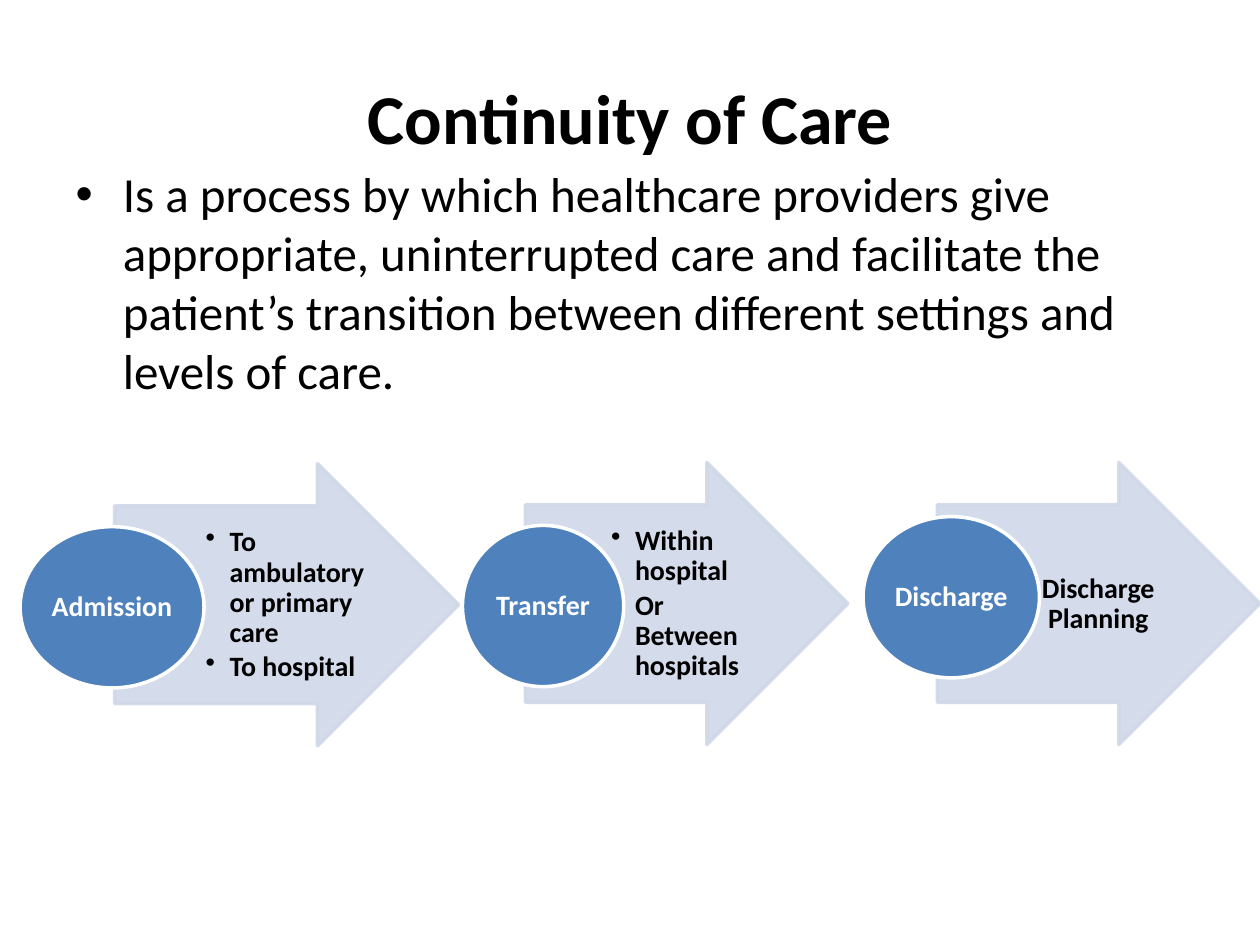
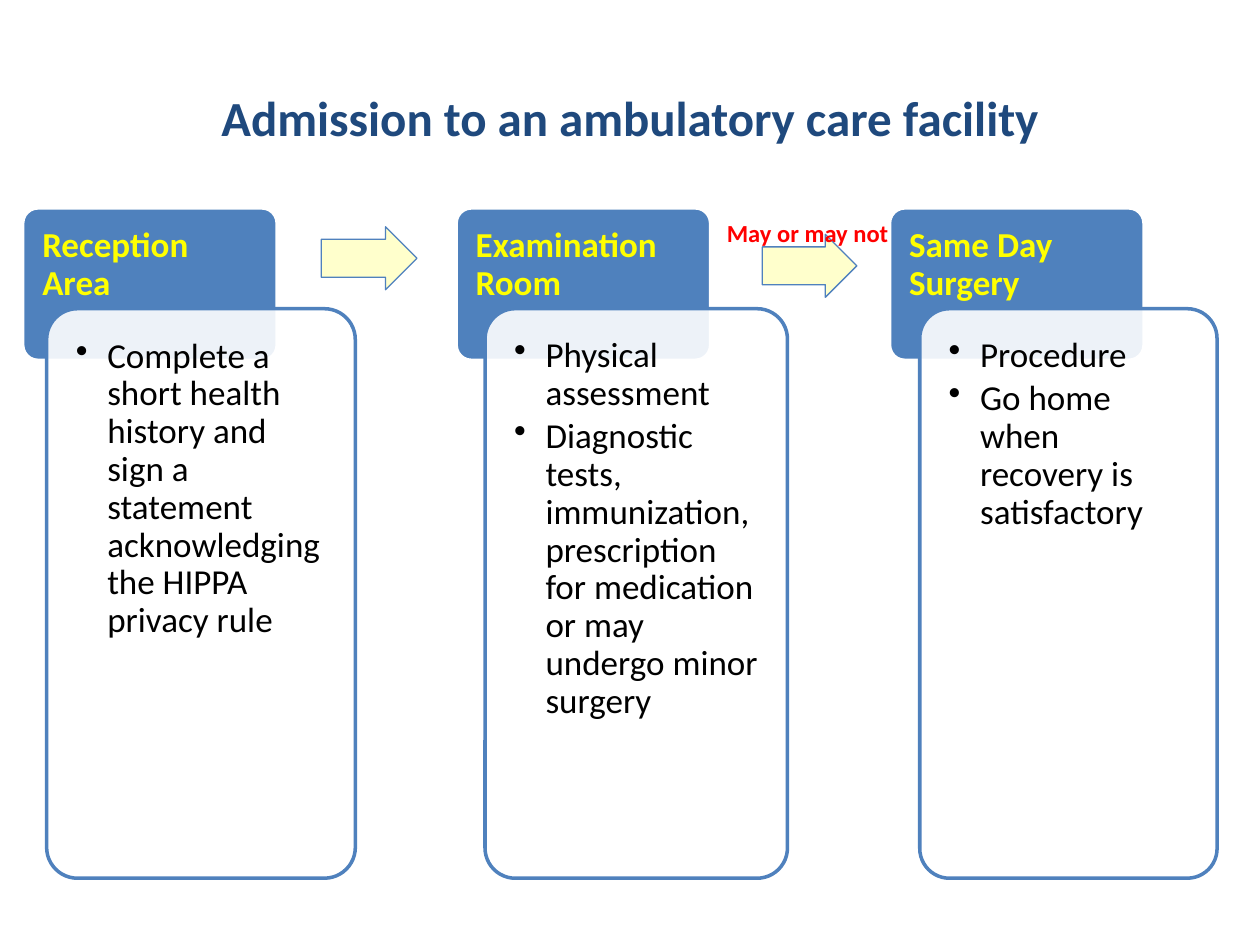
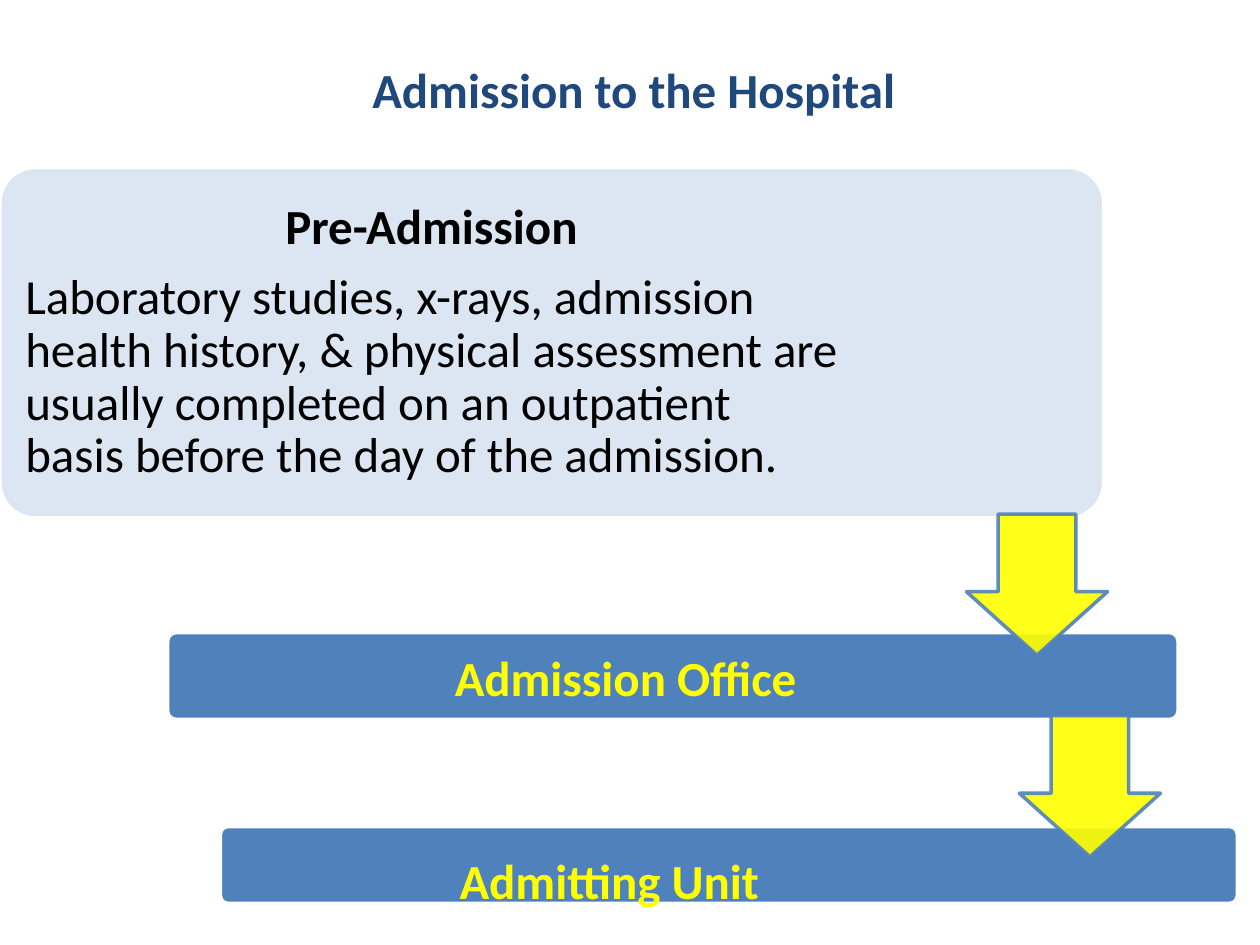
from lxml import etree
from pptx import Presentation
from pptx import util as u
from pptx.dml.color import RGBColor
from pptx.enum import shapes, text
from pptx.oxml.ns import qn

FONT = "Calibri"
COLORS = {
    "black": "000000", "white": "FFFFFF", "navy": "1F497D", "blue": "4F81BD",
    "mist": "D0D8E8", "pale": "DCE6F2", "yellow": "FFFF00", "cream": "FFFFCC",
    "red": "FF0000",
}
KINDS = shapes.MSO_SHAPE
CENTER, LEFT = text.PP_ALIGN.CENTER, text.PP_ALIGN.LEFT
MIDDLE, TOP = text.MSO_ANCHOR.MIDDLE, text.MSO_ANCHOR.TOP

TITLE_AT = (0.5, 0.3, 9, 1.25)
CONTINUITY = (
    "Is a process by which healthcare providers give appropriate, uninterrupted "
    "care and facilitate the patient’s transition between different settings and "
    "levels of care."
)
# Stage name, ellipse position, arrow position, arrow text, bulleted
STAGES = [
    ("Admission", (0.16, 4.18, 1.46, 1.28), (0.91, 3.68, 2.73, 2.24),
     ["To ambulatory or primary care", "To hospital"], True),
    ("Transfer", (3.67, 4.17, 1.28, 1.28), (4.17, 3.67, 2.56, 2.24),
     ["Within hospital", "Or Between hospitals"], True),
    ("Discharge", (6.85, 4.1, 1.4, 1.28), (7.44, 3.67, 2.56, 2.24),
     ["Discharge Planning"], False),
]
# Area name, card left, card width, steps
AREAS = [
    ("Reception Area", 0.37, 2.45,
     ["Complete a short health history and sign a statement acknowledging the "
      "HIPPA privacy rule"]),
    ("Examination Room", 3.85, 2.4,
     ["Physical assessment",
      "Diagnostic tests, immunization, prescription for medication or may undergo "
      "minor surgery"]),
    ("Same Day Surgery", 7.3, 2.36,
     ["Procedure", "Go home when recovery is satisfactory"]),
]
AREA_ARROWS = [(2.55, 1.8, 0.76, 0.5), (6.05, 1.86, 0.75, 0.5)]
PRE_ADMISSION = [
    "Pre-Admission",
    "Laboratory studies, x-rays, admission health history, & physical assessment "
    "are usually completed on an outpatient basis before the day of the admission.",
]
# Caption, bar position, caption position
UNITS = [
    ("Admission Office", (1.33, 5.02, 8.02, 0.69), (0.59, 5.09, 8.75, 0.57)),
    ("Admitting Unit", (1.75, 6.56, 8.07, 0.61), (1.77, 6.7, 6.13, 0.57)),
]
DOWN_ARROWS = [(7.67, 4.08), (8.09, 5.68)]


def rgb(name):
    return RGBColor.from_string(COLORS[name])


def inches(values):
    return [u.Inches(value) for value in values]


def set_font(span, size, color, bold=False):
    for name, value in {"name": FONT, "size": u.Pt(size), "bold": bold}.items():
        setattr(span.font, name, value)
    span.font.color.rgb = rgb(color)


def set_opacity(fill_parent, percent):
    color = fill_parent.find(qn("a:solidFill"))[0]
    etree.SubElement(color, qn("a:alpha"), val=str(percent * 1000))


def add_block(page, kind, at, fill, line, width=2, adjust=(), opacity=100, line_opacity=100):
    block = page.shapes.add_shape(kind, *inches(at))
    block.shadow.inherit = False
    for index, value in enumerate(adjust):
        block.adjustments[index] = value
    block.fill.solid()
    block.fill.fore_color.rgb = rgb(fill)
    block.line.color.rgb = rgb(line)
    block.line.width = u.Pt(width)
    if opacity < 100:
        set_opacity(block.fill._xPr, opacity)
    if line_opacity < 100:
        set_opacity(block.line._get_or_add_ln(), line_opacity)
    return block


def write(box, lines, size, color, bold=False, align=LEFT, anchor=MIDDLE,
          insets=(0.1, 0.05, 0.1, 0.05), gap=0.35, spacing=0.9, indent=0, wrap=True):
    """Fill a box; gap is a share of the text size, an indent brings bullets."""
    frame = box.text_frame
    frame.word_wrap = wrap
    frame.vertical_anchor = anchor
    for side, inset in zip(("left", "top", "right", "bottom"), insets):
        setattr(frame, f"margin_{side}", u.Inches(inset))
    for index, line in enumerate(lines):
        para = frame.add_paragraph() if index else frame.paragraphs[0]
        para.alignment = align
        para.line_spacing = spacing
        para.space_after = u.Pt(size * gap)
        span = para.add_run()
        span.text = line
        set_font(span, size, color, bold)
        if indent:
            props = para._p.get_or_add_pPr()
            props.set("marL", str(u.Inches(indent)))
            props.set("indent", str(-u.Inches(indent)))
            etree.SubElement(props, qn("a:buChar"), char="•")
    return frame


def add_text(page, at, lines, size, color, **format_values):
    box = page.shapes.add_textbox(*inches(at))
    write(box, lines, size, color, **format_values)


def place(holder, at, line, size, color, bold=False):
    holder.left, holder.top, holder.width, holder.height = inches(at)
    holder.text_frame.text = line
    set_font(holder.text_frame.paragraphs[0].runs[0], size, color, bold)


def add_page(deck, layout, title, at=TITLE_AT, size=28, color="navy"):
    page = deck.slides.add_slide(deck.slide_layouts[layout])
    place(page.shapes.title, at, title, size, color, bold=True)
    return page


def build_continuity(deck):
    page = add_page(deck, 1, "Continuity of Care", size=40, color="black")
    place(page.placeholders[1], (0.5, 1.25, 9, 4.95), CONTINUITY, 28, "black")
    for name, circle_at, arrow_at, lines, bulleted in STAGES:
        add_block(page, KINDS.RIGHT_ARROW, arrow_at, "mist", "mist",
                  adjust=(0.7, 0.5), opacity=90, line_opacity=90)
        left, top, width, _ = arrow_at
        look = {"gap": 0.15, "indent": 0.19} if bulleted else {"align": CENTER}
        add_text(page, (left + width / 4, top + 0.34, width * 0.49, 1.57), lines, 16,
                 "black", bold=True, insets=(0.04, 0.01, 0.02, 0.01), **look)
        circle = add_block(page, KINDS.OVAL, circle_at, "blue", "white")
        write(circle, [name], 16, "white", bold=True, align=CENTER, insets=[0.01] * 4)


def build_ambulatory(deck):
    page = add_page(deck, 5, "Admission to an ambulatory care facility")
    for index, (name, left, width, steps) in enumerate(AREAS):
        tab = add_block(page, KINDS.ROUNDED_RECTANGLE, (0.18 + 3.44 * index, 1.65, 2.02, 1.21),
                        "blue", "white", adjust=[0.1])
        write(tab, [name], 20, "yellow", bold=True, anchor=TOP, insets=[0.12] * 4)
        card = add_block(page, KINDS.ROUNDED_RECTANGLE, (left, 2.45, width, 4.52),
                         "white", "blue", adjust=[0.1], opacity=90)
        write(card, steps, 20, "black", anchor=TOP, insets=[0.16] * 4, gap=0.15, indent=0.25)
    for arrow_at in AREA_ARROWS:
        add_block(page, KINDS.RIGHT_ARROW, arrow_at, "cream", "blue", 0.75, (0.6, 0.5))
    add_text(page, (5.67, 1.68, 1.49, 0.34), ["May or may not"], 14, "red", bold=True,
             anchor=TOP, gap=0, spacing=1.0, wrap=False)


def build_hospital(deck):
    page = add_page(deck, 5, "Admission to the Hospital", at=(0.53, 0.08, 9, 1.25))
    panel = add_block(page, KINDS.ROUNDED_RECTANGLE, (0, 1.33, 8.76, 2.78),
                      "pale", "white", adjust=[0.1])
    frame = write(panel, PRE_ADMISSION, 28, "black", insets=(0.12, 0.12, 2.03, 0.12))
    frame.paragraphs[0].alignment = CENTER
    frame.paragraphs[0].runs[0].font.bold = True
    for _, bar_at, _ in UNITS:
        add_block(page, KINDS.ROUNDED_RECTANGLE, bar_at, "blue", "white", adjust=[0.1])
    for left, top in DOWN_ARROWS:
        add_block(page, KINDS.DOWN_ARROW, (left, top, 1.12, 1.12), "yellow", "blue",
                  adjust=(0.55, 0.45), opacity=90, line_opacity=90)
    for name, _, caption_at in UNITS:
        add_text(page, caption_at, [name], 28, "yellow", bold=True, align=CENTER,
                 gap=0, spacing=1.0)


def main():
    deck = Presentation()
    deck.slide_width, deck.slide_height = inches((10, 7.5))
    for build in (build_continuity, build_ambulatory, build_hospital):
        build(deck)
    deck.save("out.pptx")


if __name__ == "__main__":
    main()
